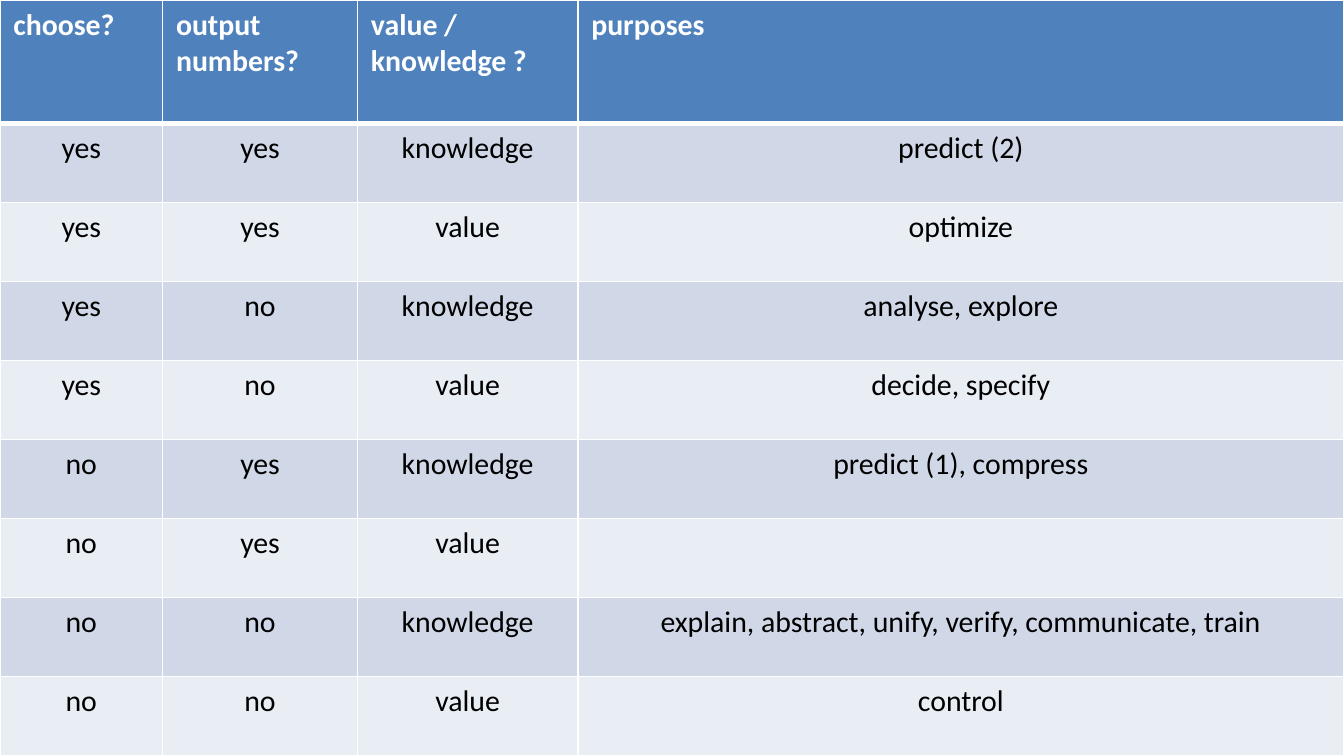
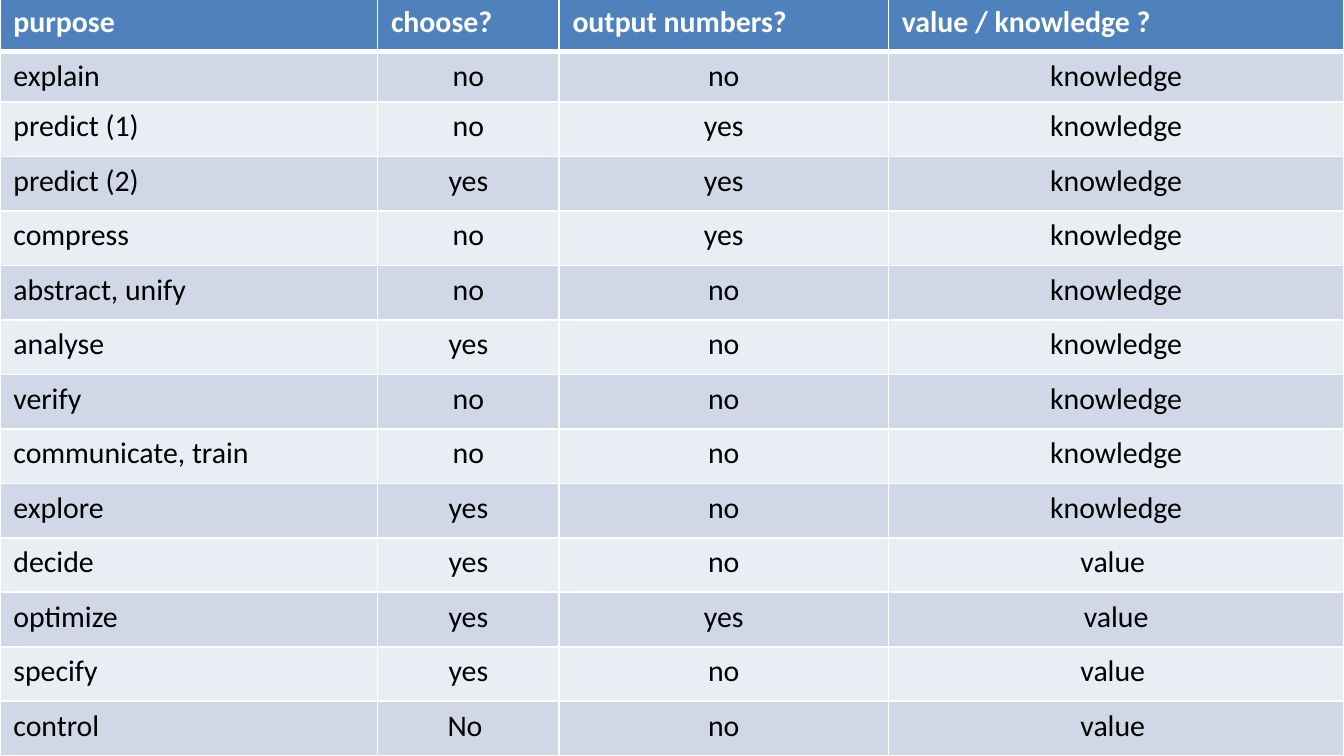
from lxml import etree
from pptx import Presentation
from pptx.dml.color import RGBColor
from pptx.enum import text
from pptx.oxml import ns
from pptx.util import Inches, Pt

SLIDE_W = 10
SLIDE_H = SLIDE_W * 9 / 16
FONT = "Calibri"
WHITE = RGBColor(0xFF, 0xFF, 0xFF)
BLACK = RGBColor(0x00, 0x00, 0x00)
HEADER = RGBColor(0x4F, 0x81, 0xBD)
BANDS = RGBColor(0xD0, 0xD8, 0xE8), RGBColor(0xE9, 0xED, 0xF4)
THIN, THICK = Pt(1), Pt(3)

CLASS_COLS = [1.21, 1.45, 1.64, 5.7]
CLASS_ROWS = [
    ("choose?", "output numbers?", "value / knowledge ?", "purposes"),
    ("yes", "yes", "knowledge", "predict (2)"),
    ("yes", "yes", "value", "optimize"),
    ("yes", "no", "knowledge", "analyse, explore"),
    ("yes", "no", "value", "decide, specify"),
    ("no", "yes", "knowledge", "predict (1), compress"),
    ("no", "yes", "value", ""),
    ("no", "no", "knowledge", "explain, abstract, unify, verify, communicate, train"),
    ("no", "no", "value", "control"),
]

PURPOSE_COLS = [2.81, 1.35, 2.45, 3.39]
PURPOSE_ROWS = [
    ("purpose", "choose?", "output numbers?", "value / knowledge ?"),
    ("explain", "no", "no", "knowledge"),
    ("predict (1)", "no", "yes", "knowledge"),
    ("predict (2)", "yes", "yes", "knowledge"),
    ("compress", "no", "yes", "knowledge"),
    ("abstract, unify", "no", "no", "knowledge"),
    ("analyse", "yes", "no", "knowledge"),
    ("verify", "no", "no", "knowledge"),
    ("communicate, train", "no", "no", "knowledge"),
    ("explore", "yes", "no", "knowledge"),
    ("decide", "yes", "no", "value "),
    ("optimize", "yes", "yes", "value"),
    ("specify", "yes", "no", "value "),
    ("control", "No ", "no", "value "),
]


def write(tf, words, color=BLACK, bold=False, align=text.PP_ALIGN.CENTER, size=16):
    p = tf.paragraphs[0]
    p.alignment = align
    if words:
        r = p.add_run()
        r.text = words
        r.font.name, r.font.size, r.font.bold = FONT, Pt(size), bold
        r.font.color.rgb = color


def set_borders(cell, top, bottom):
    """Draw white borders; the side ones are always thin."""
    tc_pr = cell._tc.get_or_add_tcPr()
    widths = {"a:lnL": THIN, "a:lnR": THIN, "a:lnT": top, "a:lnB": bottom}
    for i, (tag, width) in enumerate(widths.items()):
        ln = etree.Element(ns.qn(tag), w=str(int(width)))
        fill = etree.SubElement(ln, ns.qn("a:solidFill"))
        etree.SubElement(fill, ns.qn("a:srgbClr"), val=str(WHITE))
        tc_pr.insert(i, ln)


def add_banded_table(slide, box, cols, rows, heights, left_cols=()):
    """Fill box with a table; heights fixes some rows and the rest share what is left."""
    left, top, width, height = box
    shared = (height - sum(heights.values())) / (len(rows) - len(heights))
    frame = slide.shapes.add_table(len(rows), len(cols), Inches(left), Inches(top),
                                   Inches(width), Inches(height))
    table = frame.table
    for column, w in zip(table.columns, cols):
        column.width = Inches(w)
    for i, row in enumerate(rows):
        table.rows[i].height = Inches(heights.get(i, shared))
        is_header = i == 0
        for j, words in enumerate(row):
            cell = table.cell(i, j)
            cell.fill.solid()
            cell.fill.fore_color.rgb = HEADER if is_header else BANDS[(i - 1) % 2]
            set_borders(cell, THICK if i == 1 else THIN, THICK if is_header else THIN)
            at_left = is_header or j in left_cols
            write(cell.text_frame, words,
                  color=WHITE if is_header else BLACK, bold=is_header,
                  align=text.PP_ALIGN.LEFT if at_left else text.PP_ALIGN.CENTER)


def main():
    prs = Presentation()
    prs.slide_width, prs.slide_height = Inches(SLIDE_W), Inches(SLIDE_H)
    blank = prs.slide_layouts[6]
    add_banded_table(prs.slides.add_slide(blank), (0, 0, SLIDE_W, SLIDE_H),
                     CLASS_COLS, CLASS_ROWS, {0: 0.92})
    add_banded_table(prs.slides.add_slide(blank), (0, -0.02, SLIDE_W, SLIDE_H + 0.02),
                     PURPOSE_COLS, PURPOSE_ROWS, {1: 0.37}, left_cols=(0,))
    prs.save("out.pptx")


if __name__ == "__main__":
    main()
